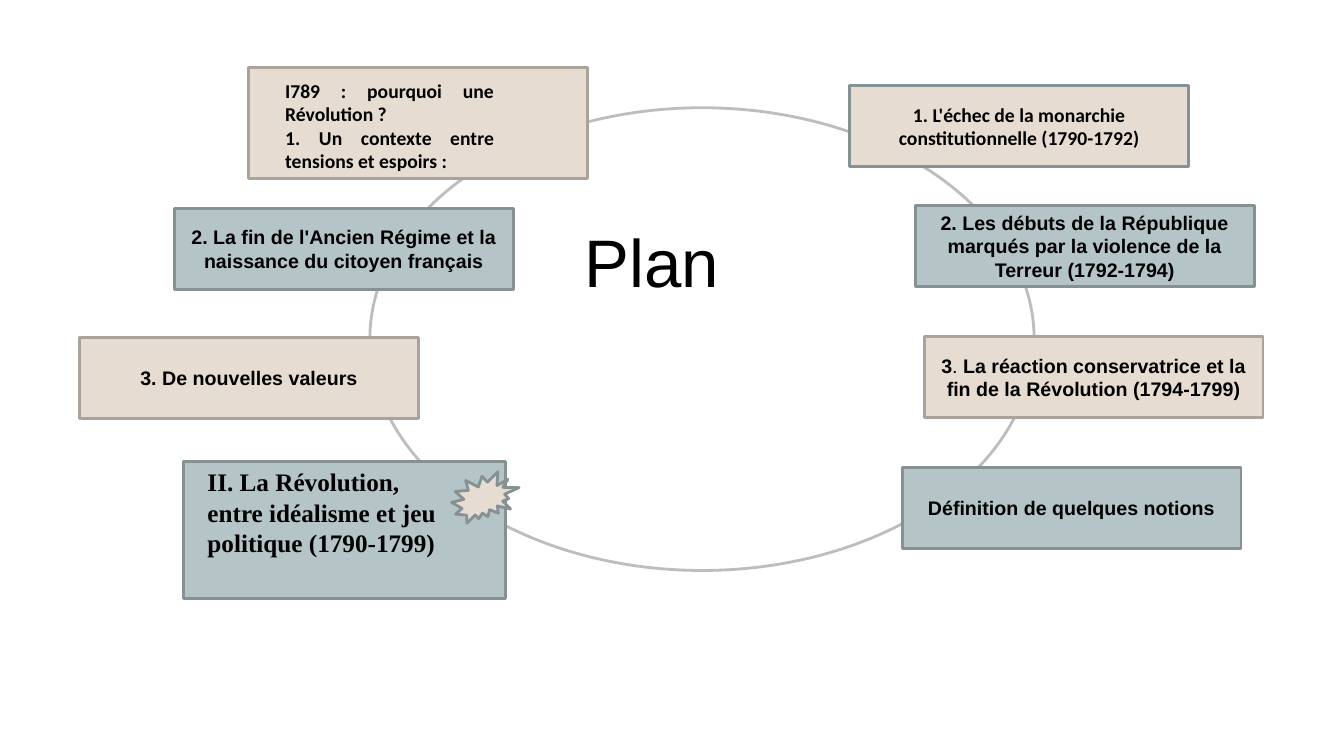
"""Build the "Plan" slide: topic boxes placed around an ellipse."""
from pptx import Presentation
from pptx.dml.color import RGBColor
from pptx.enum.shapes import MSO_SHAPE as Shape
from pptx.enum.text import MSO_ANCHOR as Anchor, PP_ALIGN as Align
from pptx.util import Pt

WHITE = RGBColor(0xFF, 0xFF, 0xFF)
BLACK = RGBColor(0, 0, 0)
RING = RGBColor(0xBD, 0xBD, 0xBD)
SAND = RGBColor(0xE6, 0xDC, 0xD2)
TAUPE = RGBColor(0xAA, 0xA3, 0x9B)
MIST = RGBColor(0xB5, 0xC4, 0xC7)
SLATE = RGBColor(0x86, 0x91, 0x93)

TOPIC_WIDTH, TOPIC_HEIGHT = 242, 57.6
TOPICS = [
    (124.6, 149, MIST, SLATE, "Arial",
     [("2. La fin de l'Ancien Régime et la naissance du citoyen français", True)]),
    (56.9, 241.2, SAND, TAUPE, "Arial", [("3. De nouvelles valeurs", True)]),
    (607, 61.2, SAND, SLATE, "Calibri",
     [("1. L'échec de la monarchie constitutionnelle (1790-1792)", True)]),
    (644.4, 334, MIST, SLATE, "Arial", [("Définition de quelques notions", True)]),
    (660.2, 240.5, SAND, TAUPE, "Arial",
     [("3", True), (". ", False),
      ("La réaction conservatrice et la fin de la Révolution (1794-1799)", True)]),
    (653.8, 146.9, MIST, SLATE, "Arial",
     [("2. Les débuts de la République marqués par la violence de la Terreur (1792-1794)", True)]),
]
RING_PLACE = (264.2, 77, 474.5, 330.5)
FIRST_PART_PLACE = (177.8, 48.2, TOPIC_WIDTH, 79.2)
SECOND_PART_PLACE = (131, 329.8, 230.4, 97.9)
BURST_PLACE = (322.6, 337, 48.2, 36.7)
LABELS = [
    ((410.4, 154.1, 176.4, 65.5), "Arial", 48, False, Align.LEFT, ["Plan"]),
    ((196.6, 52.6, 163.4, 74.9), "Calibri", 14, True, Align.JUSTIFY,
     ["I789 : pourquoi une Révolution ?",
      "1. Un contexte entre tensions et espoirs :"]),
    ((141.1, 329.8, 181.4, 72.7), "Times New Roman", 18, True, Align.LEFT,
     ["II. La Révolution, entre idéalisme et jeu politique (1790-1799)"]),
]


def add_outlined(page, kind, place, fill, line):
    shape = page.shapes.add_shape(kind, *map(Pt, place))
    shape.shadow.inherit = False
    shape.fill.solid()
    shape.fill.fore_color.rgb = fill
    shape.line.color.rgb = line
    shape.line.width = Pt(2)
    return shape


def add_span(para, text, font, size, bold):
    span = para.add_run()
    span.text = text
    span.font.name = font
    span.font.size = Pt(size)
    span.font.bold = bold
    span.font.color.rgb = BLACK


def add_topic(page, left, top, fill, line, font, spans):
    place = (left, top, TOPIC_WIDTH, TOPIC_HEIGHT)
    box = add_outlined(page, Shape.FLOWCHART_PROCESS, place, fill, line)
    frame = box.text_frame
    frame.word_wrap = True
    frame.vertical_anchor = Anchor.MIDDLE
    para = frame.paragraphs[0]
    para.alignment = Align.CENTER
    for text, bold in spans:
        add_span(para, text, font, 14, bold)


def add_label(page, place, font, size, bold, alignment, lines):
    frame = page.shapes.add_textbox(*map(Pt, place)).text_frame
    frame.word_wrap = True
    for index, line in enumerate(lines):
        para = frame.add_paragraph() if index else frame.paragraphs[0]
        para.alignment = alignment
        add_span(para, line, font, size, bold)


def main():
    deck = Presentation()
    deck.slide_width, deck.slide_height = Pt(960), Pt(540)
    page = deck.slides.add_slide(deck.slide_layouts[6])
    add_outlined(page, Shape.OVAL, RING_PLACE, WHITE, RING)
    add_outlined(page, Shape.FLOWCHART_PROCESS, FIRST_PART_PLACE, SAND, TAUPE)
    for topic in TOPICS:
        add_topic(page, *topic)
    add_outlined(page, Shape.FLOWCHART_PROCESS, SECOND_PART_PLACE, MIST, SLATE)
    add_outlined(page, Shape.EXPLOSION2, BURST_PLACE, SAND, SLATE)
    for label in LABELS:
        add_label(page, *label)
    deck.save("out.pptx")


if __name__ == "__main__":
    main()
